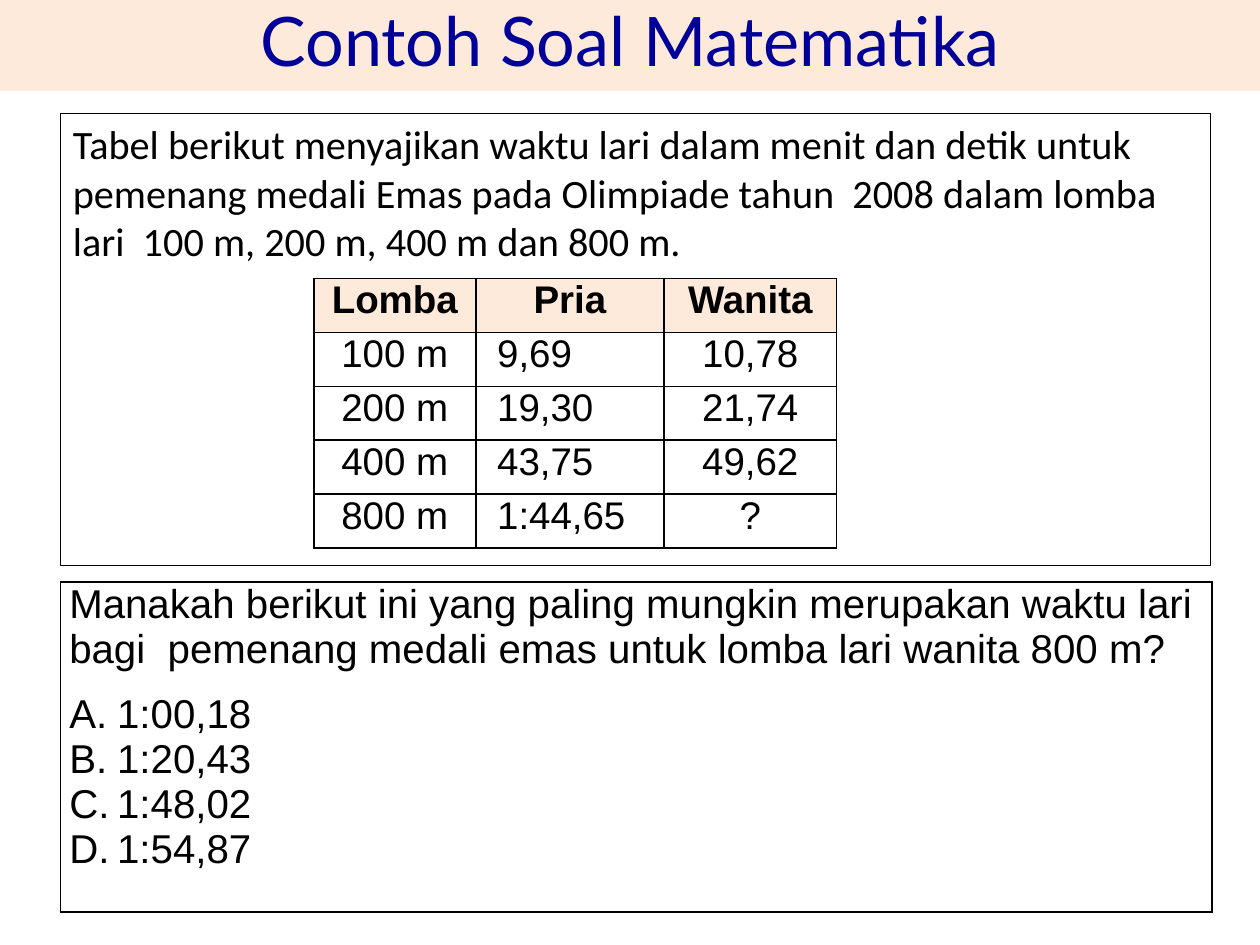
from collections import namedtuple

from lxml.etree import SubElement
from pptx import Presentation
from pptx.dml.color import RGBColor
from pptx.enum.shapes import MSO_SHAPE as Shape
from pptx.enum.text import MSO_ANCHOR as Anchor, PP_ALIGN as Align
from pptx.oxml.ns import qn
from pptx.util import Inches, Pt

COLORS = {"ink": "000000", "title": "000099", "band": "FDEADA"}
COLUMNS, ROWS = 100, 75
WIDTH, HEIGHT = Inches(10), Inches(7.5)

Box = namedtuple("Box", "left top width height")

RESULTS = [
    ["Lomba", "Pria", "Wanita"],
    ["100 m", "9,69", "10,78"],
    ["200 m", "19,30", "21,74"],
    ["400 m", "43,75", "49,62"],
    ["800 m", "1:44,65", "?"],
]
PROBLEM = (
    "Tabel berikut menyajikan waktu lari dalam menit dan detik untuk pemenang "
    "medali Emas pada Olimpiade tahun  2008 dalam lomba lari  100 m, 200 m, "
    "400 m dan 800 m."
)
QUESTION = (
    "Manakah berikut ini yang paling mungkin merupakan waktu lari bagi  "
    "pemenang medali emas untuk lomba lari wanita 800 m?"
)
CHOICES = ["1:00,18", "1:20,43", "1:48,02", "1:54,87"]


def grid_box(left, top, width, height):
    column, row = WIDTH / COLUMNS, HEIGHT / ROWS
    return Box(int(left * column), int(top * row), int(width * column), int(height * row))


def color(name):
    return RGBColor.from_string(COLORS[name])


def write(para, text, font, size, ink="ink", bold=False, align=Align.LEFT):
    para.text = text
    para.alignment = align
    for span in para.runs:
        span.font.name = font
        span.font.size = Pt(size)
        span.font.bold = bold
        span.font.color.rgb = color(ink)


def add_panel(page, box, anchor):
    panel = page.shapes.add_shape(Shape.RECTANGLE, *box)
    panel.shadow.inherit = False
    panel.text_frame.word_wrap = True
    panel.text_frame.vertical_anchor = anchor
    return panel


def add_plain_table(page, box, rows, columns):
    table = page.shapes.add_table(rows, columns, *box).table
    table.first_row = table.horz_banding = False
    for cell in table.iter_cells():
        cell.margin_left = cell.margin_right = Inches(0.07)
        cell.margin_top = cell.margin_bottom = 0
        properties = cell._tc.get_or_add_tcPr()
        for side in ("lnL", "lnR", "lnT", "lnB"):
            border = SubElement(properties, qn(f"a:{side}"), w=str(Pt(1)))
            fill = SubElement(border, qn("a:solidFill"))
            SubElement(fill, qn("a:srgbClr"), val=COLORS["ink"])
        cell.fill.background()
    return table


def add_title(page, box):
    banner = add_panel(page, box, Anchor.MIDDLE)
    banner.fill.solid()
    banner.fill.fore_color.rgb = color("band")
    banner.line.fill.background()
    para = banner.text_frame.paragraphs[0]
    write(para, "Contoh Soal Matematika", "Lato", 39, "title", align=Align.CENTER)
    para.line_spacing = 0.9


def add_problem(page, box):
    panel = add_panel(page, box, Anchor.TOP)
    panel.fill.background()
    panel.line.color.rgb = color("ink")
    panel.line.width = Pt(0.75)
    write(panel.text_frame.paragraphs[0], PROBLEM, "Calibri", 23)


def add_results(page, box):
    table = add_plain_table(page, box, len(RESULTS), len(RESULTS[0]))
    for column, share in zip(table.columns, (0.31, 0.36, 0.33)):
        column.width = int(box.width * share)
    for row, values in enumerate(RESULTS):
        for column, value in enumerate(values):
            cell = table.cell(row, column)
            heading = row == 0
            indented = column == 1 and not heading
            para = cell.text_frame.paragraphs[0]
            write(para, value, "Arial", 22, bold=heading,
                  align=Align.LEFT if indented else Align.CENTER)
            para.space_before = para.space_after = Pt(6)
            if indented:
                para._p.get_or_add_pPr().set("marL", str(Inches(0.1)))
            if heading:
                cell.fill.solid()
                cell.fill.fore_color.rgb = color("band")


def add_choice(frame, text):
    para = frame.add_paragraph()
    write(para, text, "Arial", 23)
    properties = para._p.get_or_add_pPr()
    properties.set("marL", str(Inches(0.38)))
    properties.set("indent", str(-Inches(0.38)))
    SubElement(properties, qn("a:buFont"), typeface="Arial")
    SubElement(properties, qn("a:buAutoNum"), type="alphaUcPeriod")
    stops = SubElement(properties, qn("a:tabLst"))
    for stop in (0.25, 0.5):
        SubElement(stops, qn("a:tab"), pos=str(Inches(stop)), algn="l")
    return para


def add_question(page, box):
    frame = add_plain_table(page, box, 1, 1).cell(0, 0).text_frame
    write(frame.paragraphs[0], QUESTION, "Arial", 23)
    frame.paragraphs[0].space_after = Pt(11)
    for choice in CHOICES:
        para = add_choice(frame, choice)
    para.space_after = Pt(6)


def main():
    deck = Presentation()
    deck.slide_width, deck.slide_height = WIDTH, HEIGHT
    page = deck.slides.add_slide(deck.slide_layouts[6])
    add_problem(page, grid_box(4.8, 9, 91.3, 35.9))
    add_results(page, grid_box(24.9, 22.1, 41.5, 21.4))
    add_question(page, grid_box(4.8, 46.2, 91.4, 26.2))
    add_title(page, grid_box(0, -0.1, 100, 7.3))
    deck.save("out.pptx")


if __name__ == "__main__":
    main()
